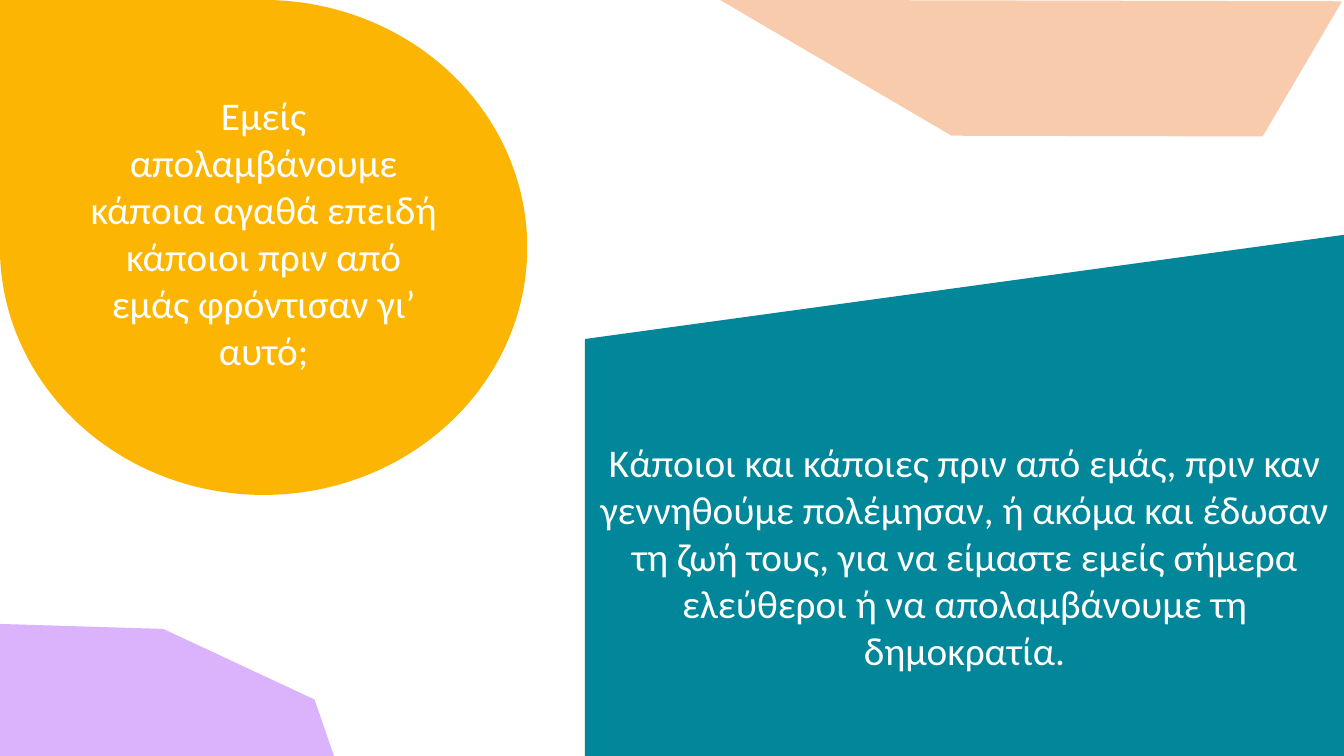
import pptx
import pptx.util
import pptx.dml.color
import pptx.enum.shapes
import pptx.enum.text

Inches = pptx.util.Inches
PRESET = pptx.enum.shapes.MSO_SHAPE

COLOURS = {
    "amber": "FCB502",
    "teal": "018799",
    "peach": "F8CBAD",
    "lilac": "DBB2FC",
    "white": "FFFFFF",
}
QUESTION = "Εμείς απολαμβάνουμε κάποια αγαθά επειδή κάποιοι πριν από εμάς φρόντισαν γι’ αυτό;"
ANSWER = (
    "Κάποιοι και κάποιες πριν από εμάς, πριν καν γεννηθούμε πολέμησαν, "
    "ή ακόμα και έδωσαν τη ζωή τους, για να είμαστε εμείς σήμερα "
    "ελεύθεροι ή να απολαμβάνουμε τη δημοκρατία."
)
# preset, (left, top, width, height), colour, rotation, text, top and bottom margins
PANELS = [
    (PRESET.TEAR, (0, 0, 5.23, 4.91), "amber", 0, QUESTION, (0.05, 0.35)),
    (PRESET.FLOWCHART_MANUAL_INPUT, (5.8, 2.33, 7.53, 5.17), "teal", 0, ANSWER, (0.52, 0.35)),
    (PRESET.DIAGONAL_STRIPE, (7.56, -1.55, 5.33, 3.11), "peach", 210.4, None, None),
]
LILAC_CORNER = [(0, 6.19), (1.62, 6.24), (3.12, 6.94), (3.33, 7.55), (0, 7.5)]
FONT = {"name": "Calibri", "size": pptx.util.Pt(28)}


def rgb(colour):
    return pptx.dml.color.RGBColor.from_string(COLOURS[colour])


def paint(panel, colour):
    panel.shadow.inherit = False
    panel.fill.solid()
    panel.fill.fore_color.rgb = rgb(colour)
    panel.line.fill.background()


def write(panel, text, margins):
    frame = panel.text_frame
    top, bottom = margins
    layout = {
        "word_wrap": True,
        "vertical_anchor": pptx.enum.text.MSO_ANCHOR.MIDDLE,
        "margin_top": Inches(top),
        "margin_bottom": Inches(bottom),
    }
    for key, value in layout.items():
        setattr(frame, key, value)
    paragraph = frame.paragraphs[0]
    paragraph.alignment = pptx.enum.text.PP_ALIGN.CENTER
    run = paragraph.add_run()
    run.text = text
    for key, value in FONT.items():
        setattr(run.font, key, value)
    run.font.color.rgb = rgb("white")


def main():
    deck = pptx.Presentation()
    deck.slide_width, deck.slide_height = Inches(13.33), Inches(7.5)
    slide = deck.slides.add_slide(deck.slide_layouts[6])

    for preset, box, colour, rotation, text, margins in PANELS:
        panel = slide.shapes.add_shape(preset, *map(Inches, box))
        panel.rotation = rotation
        paint(panel, colour)
        if preset == PRESET.TEAR:
            panel._element.spPr.xfrm.set("flipH", "1")
        if text:
            write(panel, text, margins)

    start, *others = [(Inches(x), Inches(y)) for x, y in LILAC_CORNER]
    outline = slide.shapes.build_freeform(*start)
    outline.add_line_segments(others, close=True)
    paint(outline.convert_to_shape(), "lilac")

    deck.save("out.pptx")


if __name__ == "__main__":
    main()
